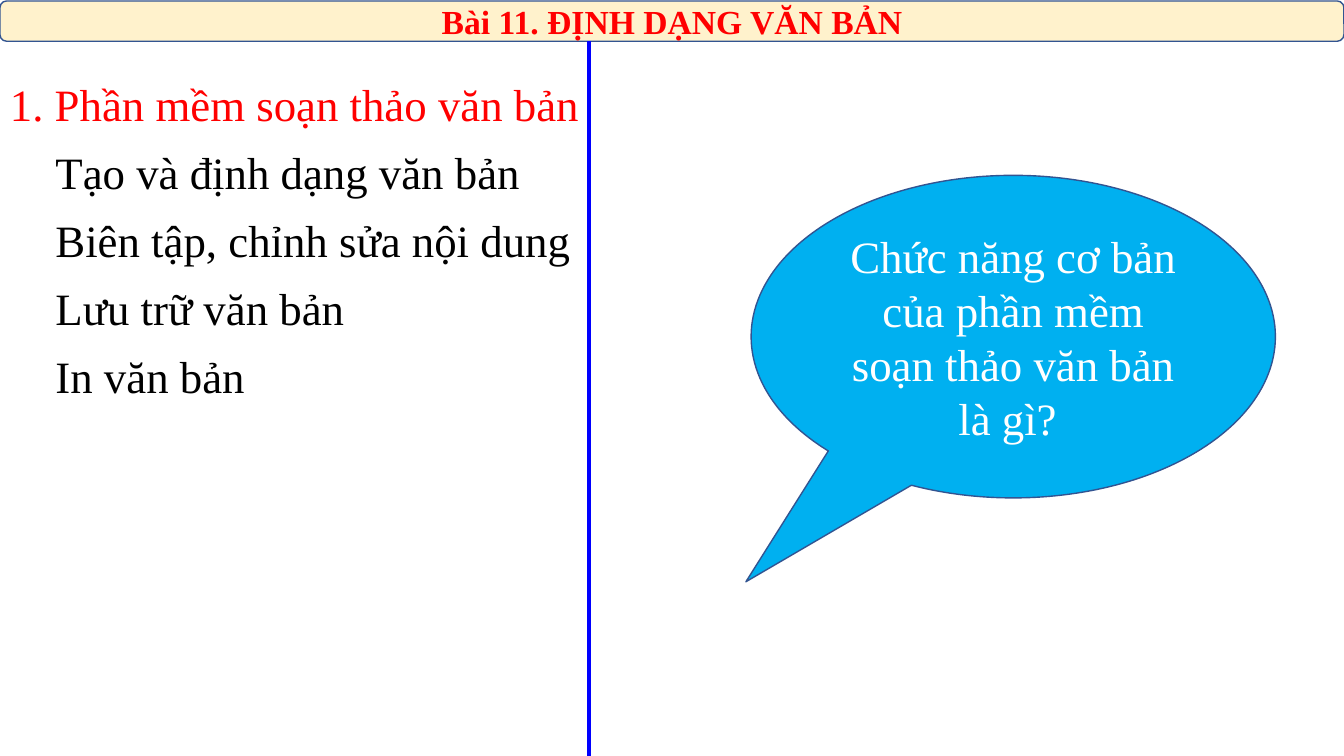
from dataclasses import dataclass

from lxml import etree
from pptx import Presentation
from pptx import util as u
from pptx.dml.color import RGBColor
from pptx.enum import shapes, text
from pptx.oxml.ns import qn


@dataclass(frozen=True)
class Theme:
    face: str = "Times New Roman"
    head: int = 24
    main: int = 32
    red: str = "FF0000"
    black: str = "000000"
    white: str = "FFFFFF"
    cream: str = "FFF2CC"
    sky: str = "00B0F0"
    edge: str = "325491"
    blue: str = "0000FF"


class Board:
    """Holds the theme and the current slide."""

    def __init__(self, deck, theme):
        self.theme = theme
        self.slide = deck.slides.add_slide(deck.slide_layouts[1])

    def place(self, item, box):
        for key, val in zip(("left", "top", "width", "height"), box):
            setattr(item, key, u.Inches(val))

    def letter(self, item, lines, color, size, align, anchor, bold=False, gap=0):
        frame = item.text_frame
        frame.text = "\n".join(lines)
        look = {"word_wrap": True, "auto_size": text.MSO_AUTO_SIZE.NONE,
                "vertical_anchor": anchor}
        for key, val in look.items():
            setattr(frame, key, val)
        form = {"alignment": align, "space_before": u.Pt(0), "space_after": u.Pt(gap)}
        style = {"name": self.theme.face, "size": u.Pt(size), "bold": bold}
        for par in frame.paragraphs:
            for key, val in form.items():
                setattr(par, key, val)
            for run in par.runs:
                for key, val in style.items():
                    setattr(run.font, key, val)
                run.font.color.rgb = RGBColor.from_string(color)

    def shape(self, kind, box, fill):
        item = self.slide.shapes.add_shape(kind, *map(u.Inches, box))
        item.shadow.inherit = False
        item.fill.solid()
        item.fill.fore_color.rgb = RGBColor.from_string(fill)
        item.line.color.rgb = RGBColor.from_string(self.theme.edge)
        item.line.width = u.Pt(1)
        return item

    def title(self, words, box):
        bar = self.shape(shapes.MSO_SHAPE.ROUNDED_RECTANGLE, box, self.theme.cream)
        item = self.slide.shapes.title
        item._element.addprevious(bar._element)  # bar goes behind its words
        self.place(item, box)
        self.letter(item, [words], self.theme.red, self.theme.head,
                    text.PP_ALIGN.CENTER, text.MSO_ANCHOR.MIDDLE, bold=True)

    def label(self, words, box):
        item = self.slide.shapes.add_textbox(*map(u.Inches, box))
        self.letter(item, [words], self.theme.red, self.theme.main,
                    text.PP_ALIGN.LEFT, text.MSO_ANCHOR.TOP)

    def items(self, lines, box, gap):
        item = self.slide.placeholders[1]
        self.place(item, box)
        self.letter(item, lines, self.theme.black, self.theme.main,
                    text.PP_ALIGN.LEFT, text.MSO_ANCHOR.TOP, gap=gap)
        for par in item.text_frame.paragraphs:
            prop = par._p.get_or_add_pPr()
            prop.set("marL", "0")
            prop.set("indent", "0")
            etree.SubElement(prop, qn("a:buNone"))

    def bubble(self, words, box, tip):
        item = self.shape(shapes.MSO_SHAPE.OVAL_CALLOUT, box, self.theme.sky)
        for num, val in enumerate(tip):
            item.adjustments[num] = val
        self.letter(item, [words], self.theme.white, self.theme.main,
                    text.PP_ALIGN.CENTER, text.MSO_ANCHOR.MIDDLE)

    def rule(self, x, top, end):
        line = self.slide.shapes.add_connector(
            shapes.MSO_CONNECTOR.STRAIGHT, *map(u.Inches, (x, top, x, end)))
        line.line.color.rgb = RGBColor.from_string(self.theme.blue)
        line.line.width = u.Pt(3)
        etree.SubElement(line._element.spPr, qn("a:effectLst"))


def main():
    deck = Presentation()
    deck.slide_width, deck.slide_height = u.Inches(13.33), u.Inches(7.5)
    board = Board(deck, Theme())

    # Lesson banner and column divider
    board.rule(5.84, 0.41, 7.5)
    board.title("Bài 11. ĐỊNH DẠNG VĂN BẢN", (0, 0.01, 13.33, 0.4))

    # Left column: section and its points
    board.label("1. Phần mềm soạn thảo văn bản", (0, 0.71, 5.91, 0.64))
    board.items(["Tạo và định dạng văn bản", "Biên tập, chỉnh sửa nội dung",
                 "Lưu trữ văn bản", "In văn bản"], (0.45, 1.39, 5.32, 2.6), gap=10)

    # Right column: question
    board.bubble("Chức năng cơ bản của phần mềm soạn thảo văn bản là gì? ",
                 (7.45, 1.74, 5.2, 3.2), (-0.51, 0.76))

    deck.save("out.pptx")


if __name__ == "__main__":
    main()
